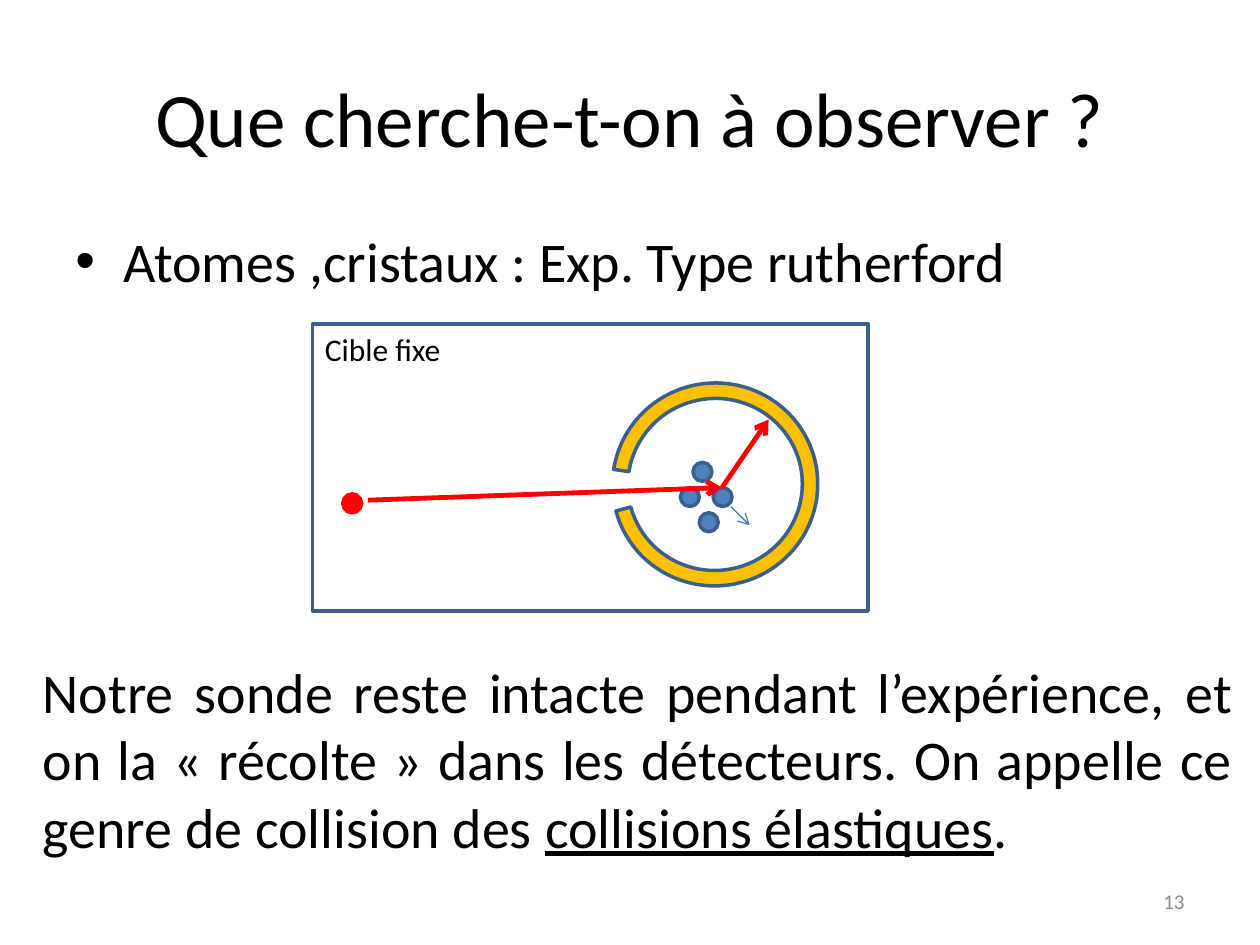
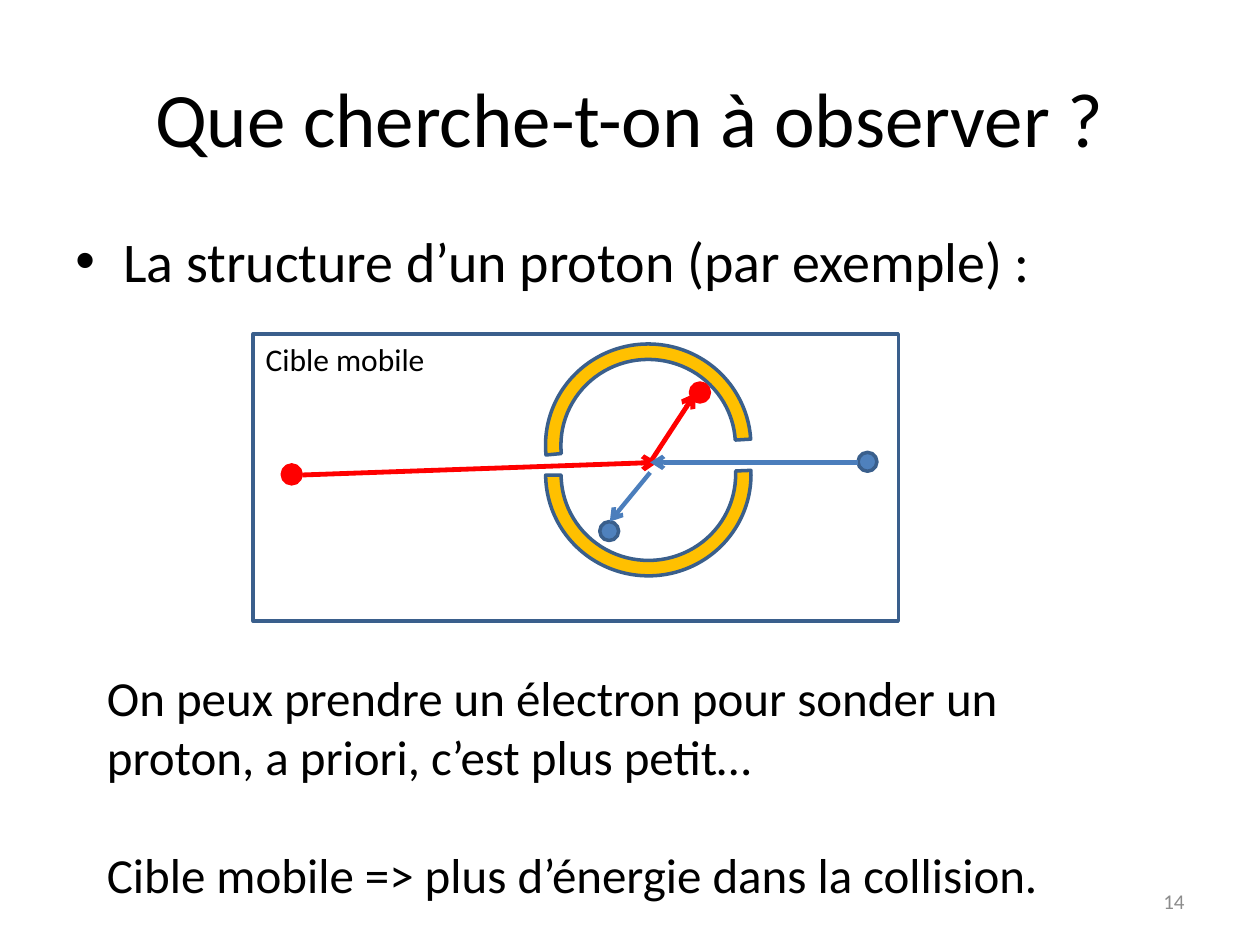
from dataclasses import dataclass
from typing import NamedTuple

from lxml import etree
from pptx import Presentation
from pptx.dml.color import RGBColor
from pptx.enum.shapes import MSO_CONNECTOR, MSO_SHAPE
from pptx.enum.text import MSO_ANCHOR, PP_ALIGN
from pptx.oxml.ns import qn
from pptx.util import Inches, Pt

LEFT, CENTER, RIGHT, JUSTIFY = PP_ALIGN.LEFT, PP_ALIGN.CENTER, PP_ALIGN.RIGHT, PP_ALIGN.JUSTIFY
TOP, MIDDLE = MSO_ANCHOR.TOP, MSO_ANCHOR.MIDDLE
OVAL, RECTANGLE, BLOCK_ARC = MSO_SHAPE.OVAL, MSO_SHAPE.RECTANGLE, MSO_SHAPE.BLOCK_ARC
STRAIGHT = MSO_CONNECTOR.STRAIGHT


@dataclass(frozen=True)
class Theme:
    font: str = "Calibri"
    black: RGBColor = RGBColor(0x00, 0x00, 0x00)
    grey: RGBColor = RGBColor(0x8C, 0x8C, 0x8C)
    probe: RGBColor = RGBColor(0xFF, 0x00, 0x00)
    target: RGBColor = RGBColor(0x4F, 0x81, 0xBD)
    target_path: RGBColor = RGBColor(0x4B, 0x7E, 0xBC)
    outline: RGBColor = RGBColor(0x3A, 0x5F, 0x8C)
    detector: RGBColor = RGBColor(0xFF, 0xC0, 0x00)
    title_size: float = 44
    body_size: float = 32
    remark_size: float = 28
    label_size: float = 18
    number_size: float = 12
    outline_width: float = 2


THEME = Theme()
TITLE = "Que cherche-t-on à observer ?"
PARTICLE_SIZE = 0.15
DETECTOR_SIZE = (1.63, 1.61)
DETECTOR_THICKNESS = 0.076
DEGREE = 0.6  # one degree in block arc adjustment units
FRAME_HEIGHT = 2.28


class Area(NamedTuple):
    left: float
    top: float
    width: float
    height: float


class Span(NamedTuple):
    text: str
    underline: bool = False


@dataclass(frozen=True)
class Writing:
    area: Area
    paragraphs: tuple[tuple[Span, ...], ...]
    size: float
    color: RGBColor = THEME.black
    align: PP_ALIGN = LEFT
    anchor: MSO_ANCHOR = TOP
    gap: float = 0  # points between paragraphs
    bullet: bool = False


@dataclass(frozen=True)
class Particle:
    left: float
    top: float
    probe: bool = False


@dataclass(frozen=True)
class Path:
    start: tuple[float, float]
    end: tuple[float, float]
    color: RGBColor = THEME.probe
    width: float = 2.75


@dataclass(frozen=True)
class Detector:
    left: float
    top: float
    start_angle: float
    rotation: float = 0
    end_angle: float = 356.5


@dataclass(frozen=True)
class Frame:
    left: float
    top: float
    width: float
    label: str


@dataclass(frozen=True)
class Page:
    number: int
    topic: str
    diagram: tuple
    remark: Writing


def apply(target: object, values: dict) -> None:
    for name, value in values.items():
        setattr(target, name, value)


def add_bullet(para) -> None:
    properties = para._p.get_or_add_pPr()
    properties.set("marL", str(Inches(0.38)))
    properties.set("indent", str(Inches(-0.38)))
    etree.SubElement(properties, qn("a:buFont"), typeface="Arial")
    etree.SubElement(properties, qn("a:buChar"), char="•")


def draw_writing(slide, writing: Writing) -> None:
    box = slide.shapes.add_textbox(*map(Inches, writing.area))
    frame = box.text_frame
    apply(frame, {"word_wrap": True, "vertical_anchor": writing.anchor})
    for index, spans in enumerate(writing.paragraphs):
        para = frame.add_paragraph() if index else frame.paragraphs[0]
        para.alignment = writing.align
        if writing.bullet:
            para.space_before = Pt(writing.size * 0.2)
            add_bullet(para)
        elif index:
            para.space_before = Pt(writing.gap)
        for span in spans:
            run = para.add_run()
            run.text = span.text
            apply(run.font, {"name": THEME.font, "size": Pt(writing.size),
                             "underline": span.underline})
            run.font.color.rgb = writing.color


def draw_shape(slide, kind: MSO_SHAPE, area: Area, fill: RGBColor | None, line: RGBColor):
    shape = slide.shapes.add_shape(kind, *map(Inches, area))
    shape.shadow.inherit = False
    if fill is None:
        shape.fill.background()
    else:
        shape.fill.solid()
        shape.fill.fore_color.rgb = fill
    shape.line.color.rgb = line
    shape.line.width = Pt(THEME.outline_width)
    return shape


def draw_particle(slide, particle: Particle) -> None:
    fill, line = (THEME.probe, THEME.probe) if particle.probe else (THEME.target, THEME.outline)
    area = Area(particle.left, particle.top, PARTICLE_SIZE, PARTICLE_SIZE)
    draw_shape(slide, OVAL, area, fill, line)


def draw_path(slide, path: Path) -> None:
    connector = slide.shapes.add_connector(STRAIGHT, *map(Inches, path.start + path.end))
    connector.line.color.rgb = path.color
    connector.line.width = Pt(path.width)
    etree.SubElement(connector.line._get_or_add_ln(), qn("a:tailEnd"), type="arrow")
    etree.SubElement(connector._element.spPr, qn("a:effectLst"))


def draw_detector(slide, detector: Detector) -> None:
    area = Area(detector.left, detector.top, *DETECTOR_SIZE)
    arc = draw_shape(slide, BLOCK_ARC, area, THEME.detector, THEME.outline)
    arc.rotation = detector.rotation
    arc.adjustments[0] = detector.start_angle * DEGREE
    arc.adjustments[1] = detector.end_angle * DEGREE
    arc.adjustments[2] = DETECTOR_THICKNESS


def draw_frame(slide, frame: Frame) -> None:
    area = Area(frame.left, frame.top, frame.width, FRAME_HEIGHT)
    draw_shape(slide, RECTANGLE, area, None, THEME.outline)
    label_area = Area(frame.left, frame.top, 1.97, 0.4)
    draw_writing(slide, Writing(label_area, ((Span(frame.label),),), THEME.label_size))


DRAWERS = {Particle: draw_particle, Path: draw_path, Detector: draw_detector, Frame: draw_frame}


def draw_page(deck, page: Page) -> None:
    slide = deck.slides.add_slide(deck.slide_layouts[6])
    # Title, topic and page number
    draw_writing(slide, Writing(Area(0.5, 0.3, 9, 1.25), ((Span(TITLE),),),
                                THEME.title_size, align=CENTER, anchor=MIDDLE))
    draw_writing(slide, Writing(Area(0.5, 1.75, 9, 0.75), ((Span(page.topic),),),
                                THEME.body_size, bullet=True))
    draw_writing(slide, Writing(Area(7.17, 6.95, 2.33, 0.4), ((Span(str(page.number)),),),
                                THEME.number_size, THEME.grey, RIGHT, MIDDLE))
    # Collision diagram and remark
    for item in page.diagram:
        DRAWERS[type(item)](slide, item)
    draw_writing(slide, page.remark)


# Probe scattered by a fixed target
FIXED_TARGET = Page(
    13,
    "Atomes ,cristaux : Exp. Type rutherford",
    (
        Particle(2.72, 3.92, probe=True),
        Particle(5.4, 3.87),
        Particle(5.55, 4.07),
        Particle(5.5, 3.67),
        Particle(5.66, 3.87),
        Path((2.92, 3.97), (5.73, 3.87)),
        Detector(4.86, 3.04, start_angle=19.93, rotation=168.5),
        Path((5.73, 3.87), (6.1, 3.33)),
        Path((5.8, 4.02), (5.95, 4.17), THEME.target_path, 0.75),
        Frame(2.48, 2.57, 4.41, "Cible fixe"),
    ),
    Writing(
        Area(0.24, 5.17, 9.65, 1.72),
        ((Span("Notre sonde reste intacte pendant l’expérience, et on la « récolte » dans les "
               "détecteurs. On appelle ce genre de collision des "),
          Span("collisions élastiques", underline=True),
          Span(".")),),
        THEME.body_size,
        align=JUSTIFY,
    ),
)

# Probe and target meeting head-on
MOVING_TARGET = Page(
    14,
    "La structure d’un proton (par exemple) :",
    (
        Particle(2.24, 3.69, probe=True),
        Particle(4.76, 4.14),
        Particle(6.81, 3.59),
        Path((2.4, 3.77), (5.22, 3.67)),
        Detector(4.33, 2.96, start_angle=174.63, rotation=183.1),
        Path((5.16, 3.67), (5.52, 3.12)),
        Path((6.81, 3.67), (5.16, 3.67), THEME.target_path, 2.5),
        Detector(4.33, 2.73, start_angle=174.63),
        Particle(5.48, 3.04, probe=True),
        Path((5.16, 3.75), (4.84, 4.14), THEME.target_path, 2.5),
        Frame(2.01, 2.65, 5.12, "Cible mobile"),
    ),
    Writing(
        Area(0.75, 5.25, 8.11, 1.99),
        ((Span("On peux prendre un électron pour sonder un proton, a priori, "
               "c’est plus petit…"),),
         (Span("Cible mobile => plus d’énergie dans la collision."),)),
        THEME.remark_size,
        gap=34,
    ),
)


def main() -> None:
    deck = Presentation()
    apply(deck, {"slide_width": Inches(10), "slide_height": Inches(7.5)})
    for page in (FIXED_TARGET, MOVING_TARGET):
        draw_page(deck, page)
    deck.save("out.pptx")


if __name__ == "__main__":
    main()
